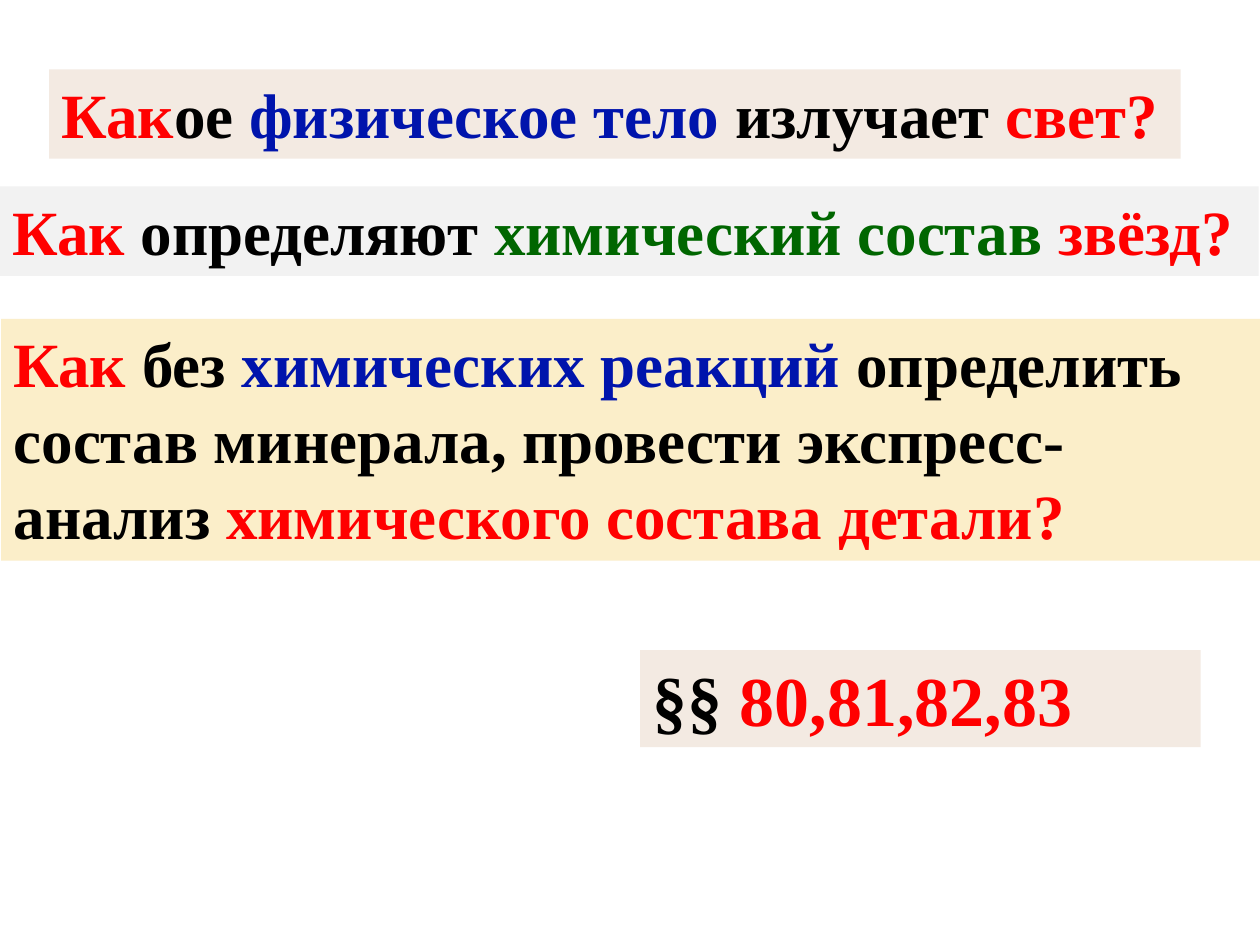
import pptx
import pptx.util
import pptx.dml.color
import pptx.enum.text

W, H = 10, 7.5
FONT = "Times New Roman"
COLORS = {
    "red": "FF0000", "black": "000000", "blue": "0014AC", "green": "006600",
    "beige": "F3EAE2", "grey": "F2F2F2", "cream": "FBEEC9",
}


def rgb(name):
    return pptx.dml.color.RGBColor.from_string(COLORS[name])


def add_run(p, text, *, color="black", size=36, bold=True):
    r = p.add_run()
    r.text = text
    r.font.name = FONT
    r.font.size = pptx.util.Pt(size)
    r.font.bold = bold
    r.font.color.rgb = rgb(color)


def add_panel(s, box, fill, paragraphs, *, size=36, wrap=False):
    """Filled text panel; box is left, top, width, height as shares of the slide."""
    lengths = [pptx.util.Inches(share * side) for share, side in zip(box, (W, H, W, H))]
    sp = s.shapes.add_textbox(*lengths)
    sp.fill.solid()
    sp.fill.fore_color.rgb = rgb(fill)
    tf = sp.text_frame
    tf.word_wrap = wrap
    tf.auto_size = pptx.enum.text.MSO_AUTO_SIZE.SHAPE_TO_FIT_TEXT
    for i, runs in enumerate(paragraphs):
        p = tf.add_paragraph() if i else tf.paragraphs[0]
        for text, color in runs:
            add_run(p, text, color=color, size=size)


def add_questions(s):
    # Light source
    add_panel(s, (0.039, 0.55 / H, 0.898, 0.71 / H), "beige", [
        [("Как", "red"), ("ое ", "black"), ("физическое тело ", "blue"),
         ("излучает", "black"), (" свет?", "red")],
    ])
    # Composition of stars
    add_panel(s, (0, 1.48 / H, 0.999, 0.71 / H), "grey", [
        [("Как", "red"), (" определяют ", "black"),
         ("химический состав ", "green"), ("звёзд?", "red")],
    ])
    # Composition of minerals and parts
    add_panel(s, (0.001, 2.53 / H, 0.999, 1.92 / H), "cream", [
        [("Как", "red"), (" без ", "black"),
         ("химических реакций ", "blue"), ("определить", "black")],
        [("состав минерала, провести экспресс-анализ ", "black"),
         ("химического состава детали?", "red")],
    ], wrap=True)


def add_reading(s):
    # Textbook sections
    add_panel(s, (0.508, 5.16 / H, 0.445, 0.77 / H), "beige", [
        [("§§ ", "black"), ("80,81,82,83", "red")],
    ], size=40, wrap=True)


def main():
    prs = pptx.Presentation()
    prs.slide_width = pptx.util.Inches(W)
    prs.slide_height = pptx.util.Inches(H)
    s = prs.slides.add_slide(prs.slide_layouts[6])
    add_questions(s)
    add_reading(s)
    prs.save("out.pptx")


if __name__ == "__main__":
    main()
